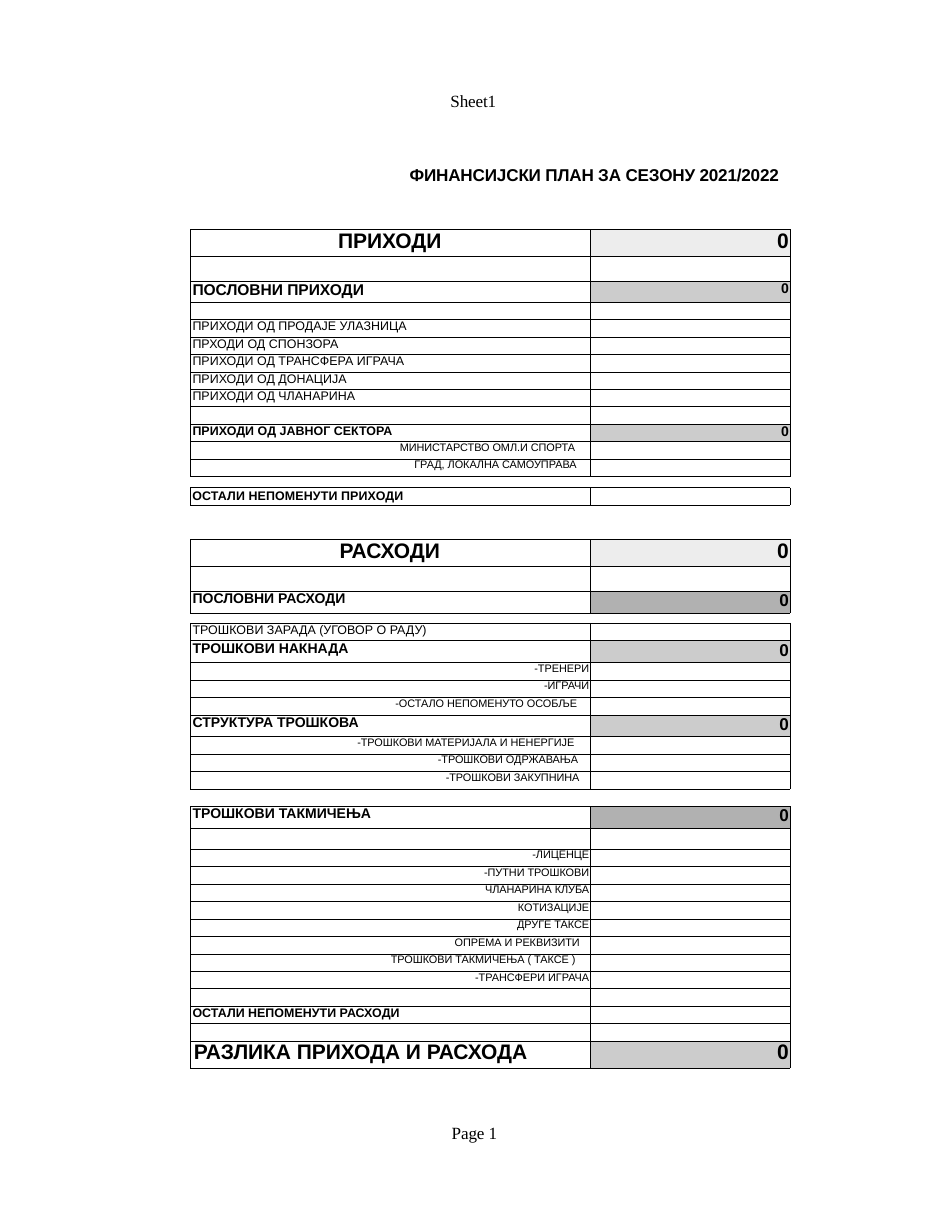
from lxml.etree import SubElement
from pptx import Presentation
from pptx.dml.color import RGBColor
from pptx.enum.shapes import MSO_CONNECTOR
from pptx.enum.text import MSO_ANCHOR, PP_ALIGN
from pptx.oxml.ns import qn
from pptx.util import Pt

COLORS = {"ink": "000000", "pale": "EDEDED", "gray": "CCCCCC", "dark": "B1B1B1"}
LEFT, LABEL_WIDTH, VALUE_WIDTH = 122.4, 257, 128.4
RIGHT = LEFT + LABEL_WIDTH + VALUE_WIDTH
SMALL_ROW = 11.25

# Row kinds: label size, bold, row height, value size
KINDS = {
    "total": (13.5, True, 17.25, 13.5),
    "section": (10, True, 13.25, 9),
    "group": (9, True, 14, 11),
    "subtotal": (8, True, SMALL_ROW, 9),
    "item": (8, False, SMALL_ROW, 8),
    "detail": (7, False, SMALL_ROW, 7),
}

# Tables: top, then rows of kind, label, left indent or alignment, value fill
EMPTY = ("item", "", 0, None)
TABLES = [
    (147.6, [
        ("total", "ПРИХОДИ", PP_ALIGN.CENTER, "pale"),
        ("gap", 16),
        ("section", "ПОСЛОВНИ ПРИХОДИ", 1.4, "gray"),
        EMPTY,
        ("item", "ПРИХОДИ ОД ПРОДАЈЕ УЛАЗНИЦА", 1.4, None),
        ("item", "ПРХОДИ ОД СПОНЗОРА", 1.4, None),
        ("item", "ПРИХОДИ ОД ТРАНСФЕРА ИГРАЧА", 1.4, None),
        ("item", "ПРИХОДИ ОД ДОНАЦИЈА", 1.4, None),
        ("item", "ПРИХОДИ ОД ЧЛАНАРИНА", 1.4, None),
        EMPTY,
        ("subtotal", "ПРИХОДИ ОД ЈАВНОГ СЕКТОРА", 1.4, "gray"),
        ("detail", "МИНИСТАРСТВО ОМЛ.И СПОРТА", 134.6, None),
        ("detail", "ГРАД, ЛОКАЛНА САМОУПРАВА", 144, None),
    ]),
    (346.7, [
        ("total", "РАСХОДИ", PP_ALIGN.CENTER, "pale"),
        ("gap", 16),
        ("group", "ПОСЛОВНИ РАСХОДИ", 1.4, "dark"),
    ]),
    (400.6, [
        ("item", "ТРОШКОВИ ЗАРАДА (УГОВОР О РАДУ)", 1.4, None),
        ("group", "ТРОШКОВИ НАКНАДА", 1.4, "gray"),
        ("detail", "-ТРЕНЕРИ", PP_ALIGN.RIGHT, None),
        ("detail", "-ИГРАЧИ", PP_ALIGN.RIGHT, None),
        ("detail", "-ОСТАЛО НЕПОМЕНУТО ОСОБЉЕ", 131.8, None),
        ("group", "СТРУКТУРА ТРОШКОВА", 1.4, "gray"),
        ("detail", "-ТРОШКОВИ МАТЕРИЈАЛА И НЕНЕРГИЈЕ", 107.3, None),
        ("detail", "-ТРОШКОВИ ОДРЖАВАЊА", 159.1, None),
        ("detail", "-ТРОШКОВИ ЗАКУПНИНА", 164.2, None),
    ]),
    (518.3, [
        ("group", "ТРОШКОВИ ТАКМИЧЕЊА", 1.4, "dark"),
        ("gap", 13.5),
        ("detail", "-ЛИЦЕНЦЕ", PP_ALIGN.RIGHT, None),
        ("detail", "-ПУТНИ ТРОШКОВИ", PP_ALIGN.RIGHT, None),
        ("detail", "ЧЛАНАРИНА КЛУБА", PP_ALIGN.RIGHT, None),
        ("detail", "КОТИЗАЦИЈЕ", PP_ALIGN.RIGHT, None),
        ("detail", "ДРУГЕ ТАКСЕ", PP_ALIGN.RIGHT, None),
        ("detail", "ОПРЕМА И РЕКВИЗИТИ", 169.9, None),
        ("detail", "ТРОШКОВИ ТАКМИЧЕЊА ( ТАКСЕ )", 128.9, None),
        ("detail", "-ТРАНСФЕРИ ИГРАЧА", PP_ALIGN.RIGHT, None),
        EMPTY,
        ("subtotal", "ОСТАЛИ НЕПОМЕНУТИ РАСХОДИ", 1.4, None),
        EMPTY,
        ("total", "РАЗЛИКА ПРИХОДА И РАСХОДА", 2.2, "gray"),
    ]),
]

deck = Presentation()
deck.slide_width, deck.slide_height = Pt(612), Pt(792)
page = deck.slides.add_slide(deck.slide_layouts[6])


def write(frame, text, size, bold, font="Arial", spacing=0):
    frame.margin_left = frame.margin_right = frame.margin_top = frame.margin_bottom = 0
    para = frame.paragraphs[0]
    para.text = text
    for span in para.runs:
        span.font.name, span.font.size, span.font.bold = font, Pt(size), bold
        span.font.color.rgb = RGBColor.from_string(COLORS["ink"])
        if spacing:
            span.font._element.set("spc", str(round(spacing * 100)))
    return para


def fill_cell(cell, text, size, bold, place, fill):
    para = write(cell.text_frame, text, size, bold)
    cell.margin_left = cell.margin_top = cell.margin_bottom = 0
    cell.margin_right = Pt(0.7)
    cell.vertical_anchor = MSO_ANCHOR.TOP
    if not text:
        SubElement(para._p, qn("a:endParaRPr"), sz=str(round(size * 100)))
    elif isinstance(place, PP_ALIGN):
        para.alignment = place
    else:
        cell.margin_left = Pt(place)
    # Thin border on every side
    properties = cell._tc.get_or_add_tcPr()
    for side in ("lnL", "lnR", "lnT", "lnB"):
        line = SubElement(properties, qn(f"a:{side}"), w=str(Pt(0.22)))
        SubElement(SubElement(line, qn("a:solidFill")), qn("a:srgbClr"), val=COLORS["ink"])
    if fill:
        cell.fill.solid()
        cell.fill.fore_color.rgb = RGBColor.from_string(COLORS[fill])
    else:
        cell.fill.background()


# Header, title, footer and the label of the single boxed row
for text, left, top, width, height, size, bold, font, spacing in [
    ("Sheet1", 289.6, 58.3, 34, 13, 11, False, "Times New Roman", -0.1),
    ("ФИНАНСИЈСКИ ПЛАН ЗА СЕЗОНУ 2021/2022", 263.3, 105.8, 240, 26, 11, True, "Arial", -0.13),
    ("ОСТАЛИ НЕПОМЕНУТИ ПРИХОДИ", 123.7, 313.9, 200, 10, 8, True, "Arial", 0.06),
    ("Page 1", 290.4, 721.4, 34, 13, 11, False, "Times New Roman", -0.1),
]:
    box = page.shapes.add_textbox(Pt(left), Pt(top), Pt(width), Pt(height))
    write(box.text_frame, text, size, bold, font, spacing)
    box.text_frame.word_wrap = bold

# Frame of the single boxed row
box_top, box_bottom = 313.4, 324.9
edges = [(x, box_top, x, box_bottom) for x in (LEFT, LEFT + LABEL_WIDTH, RIGHT)]
edges += [(LEFT, y, RIGHT, y) for y in (box_top, box_bottom)]
for edge in edges:
    rule = page.shapes.add_connector(MSO_CONNECTOR.STRAIGHT, *[Pt(value) for value in edge])
    rule.line.width = Pt(0.25)
    rule.line.color.rgb = RGBColor.from_string(COLORS["ink"])
    SubElement(rule._element.spPr, qn("a:effectLst"))

# Income and expense tables
for top, rows in TABLES:
    heights = [row[1] if row[0] == "gap" else KINDS[row[0]][2] for row in rows]
    table = page.shapes.add_table(len(rows), 2, Pt(LEFT), Pt(top),
                                  Pt(LABEL_WIDTH + VALUE_WIDTH), Pt(sum(heights))).table
    table.first_row = table.horz_banding = False
    table.columns[0].width, table.columns[1].width = Pt(LABEL_WIDTH), Pt(VALUE_WIDTH)
    for index, (row, height) in enumerate(zip(rows, heights)):
        table.rows[index].height = Pt(height)
        kind, label, place, fill = EMPTY if row[0] == "gap" else row
        size, bold, _, value_size = KINDS[kind]
        fill_cell(table.cell(index, 0), label, size, bold, place, None)
        fill_cell(table.cell(index, 1), "0" if fill else "", value_size, True,
                  PP_ALIGN.RIGHT, fill)

deck.save("out.pptx")
